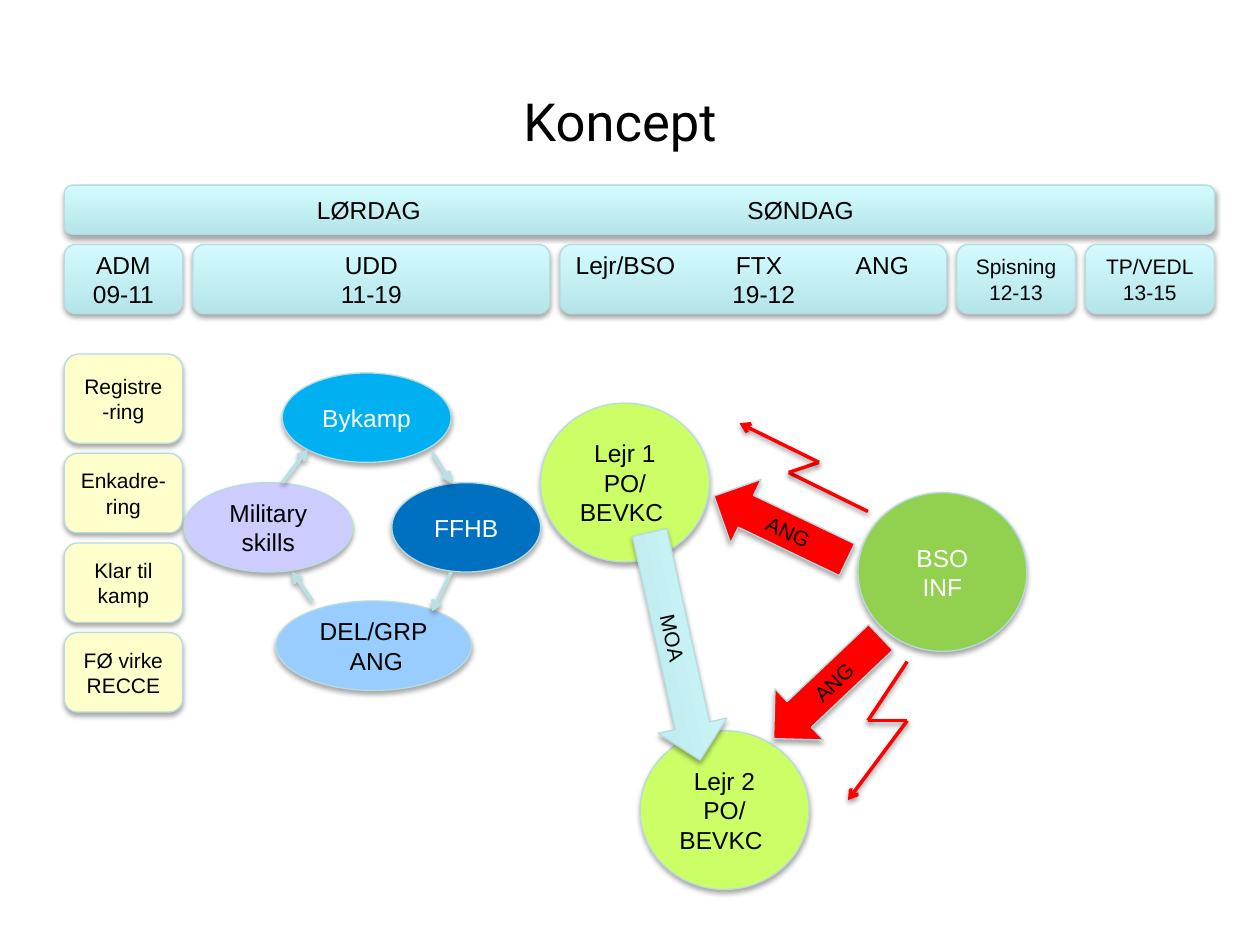
from lxml import etree
from pptx import Presentation
from pptx.dml import color
from pptx.enum import shapes, text
from pptx.oxml import ns
from pptx.util import Pt

ROUND = shapes.MSO_SHAPE.ROUNDED_RECTANGLE
OVAL = shapes.MSO_SHAPE.OVAL
ARROW = shapes.MSO_SHAPE.RIGHT_ARROW
AQUA = ("B5E5E9", "D3FBFF")
LEFT, GAP = 36.7, 5.8


def rgb(code):
    """Turn a hex string into a colour."""
    return color.RGBColor.from_string(code)


def sub(parent, tag, **attrs):
    """Add a DrawingML child element."""
    node = etree.SubElement(parent, ns.qn(tag))
    for key, val in attrs.items():
        node.set(key, str(val))
    return node


def shade(item, alpha):
    """Give a shape or line a soft shadow below it."""
    effects = sub(item._element.spPr, "a:effectLst")
    outer = sub(effects, "a:outerShdw", blurRad=Pt(3.1), dist=Pt(1.8),
                dir=5400000, rotWithShape=0)
    sub(sub(outer, "a:srgbClr", val="000000"), "a:alpha", val=alpha * 1000)


def paint(fill, tone):
    """Fill with one colour or with an upward gradient."""
    if isinstance(tone, str):
        fill.solid()
        fill.fore_color.rgb = rgb(tone)
        return
    fill.gradient()
    fill.gradient_angle = 90
    for stop, code, place in zip(fill.gradient_stops, tone, (0, 1)):
        stop.color.rgb = rgb(code)
        stop.position = place


def write(frame, words, size, ink="000000", tabs=None):
    """Write lines, centred or set on one list of tab stops per line."""
    frame.text = words
    for n, para in enumerate(frame.paragraphs):
        para.alignment = text.PP_ALIGN.LEFT if tabs else text.PP_ALIGN.CENTER
        if tabs:
            stops = sub(para._p.get_or_add_pPr(), "a:tabLst")
            for pos in tabs[n]:
                sub(stops, "a:tab", pos=Pt(pos), algn="l")
        para.font.size = Pt(size)
        para.font.name = "Arial"
        para.font.color.rgb = rgb(ink)


def block(slide, kind, box, tone, words, size=14, ink="000000", tabs=None):
    """Add a filled, shadowed shape with text."""
    shape = slide.shapes.add_shape(kind, *map(Pt, box))
    paint(shape.fill, tone)
    shape.line.color.rgb = rgb("B6DCDF")
    shape.line.width = Pt(0.75)
    shade(shape, 35)
    shape.text_frame.vertical_anchor = text.MSO_ANCHOR.MIDDLE
    write(shape.text_frame, words, size, ink, tabs)
    return shape


def thrust(slide, box, tone, words, turn, flip=False):
    """Add a turned block arrow."""
    shape = block(slide, ARROW, box, tone, words, 12)
    shape.rotation = turn
    if flip:
        shape._element.spPr.xfrm.set("flipH", "1")


def trace(slide, points, tone):
    """Join points with lines, with an arrowhead at the last."""
    for start, end in zip(points, points[1:]):
        line = slide.shapes.add_connector(
            shapes.MSO_CONNECTOR.STRAIGHT, *map(Pt, start + end))
        line.line.color.rgb = rgb(tone)
        line.line.width = Pt(2)
        if end == points[-1]:
            sub(line._element.spPr.find(ns.qn("a:ln")), "a:tailEnd", type="arrow")
        shade(line, 38)


def head(slide):
    """Set the title."""
    title = slide.shapes.title
    title.left, title.top, title.width, title.height = map(Pt, (70.6, 37.4, 567.4, 62.6))
    title.text_frame.vertical_anchor = text.MSO_ANCHOR.MIDDLE
    write(title.text_frame, "Koncept", 30)
    title.text_frame.paragraphs[0].font.name = "Roboto"


def tasks(slide):
    """Stack the Saturday morning tasks."""
    top = 202.3
    for words, high in (("Registre-ring", 51), ("Enkadre-ring", 45.4),
                        ("Klar til kamp", 45.4), ("FØ virke\nRECCE", 45.4)):
        block(slide, ROUND, (LEFT, top, 67.7, high), "FFFFCC", words, 12)
        top += high + GAP


def plan(slide):
    """Lay out the timeline bar and its phases."""
    block(slide, ROUND, (LEFT, 105.8, 657.4, 28.1), AQUA,
          "\tLØRDAG\tSØNDAG", tabs=[(136, 382)])
    left = LEFT
    for words, wide, size, tabs in (
            ("ADM\n09-11", 67.7, 14, None),
            ("UDD\n11-19", 204, 14, None),
            ("Lejr/BSO\tFTX\tANG\n\t19-12", 221, 14, [(91.5, 160), (89.5,)]),
            ("Spisning\n12-13", 67.7, 12, None),
            ("TP/VEDL\n13-15", 73.6, 12, None)):
        block(slide, ROUND, (left, 139.7, wide, 39.6), AQUA, words, size, tabs=tabs)
        left += wide + GAP


def cycle(slide):
    """Draw the training cycle."""
    for left, top, wide, tone, words, ink in (
            (223.9, 275.8, 85, "0070C0", "FFHB", "FFFFFF"),
            (161.3, 213.1, 96.5, "00B0F0", "Bykamp", "FFFFFF"),
            (105.1, 275.8, 96.5, "CCCCFF", "Military skills", "000000"),
            (157.7, 343.4, 111.6, "99CCFF", "DEL/GRP\n ANG", "000000")):
        block(slide, OVAL, (left, top, wide, 51.1), tone, words, ink=ink)
    for points in (((247, 258.5), (257.8, 275.8)), ((178.6, 343.4), (167, 326.9)),
                   ((161.3, 275.8), (175.7, 257)), ((257.8, 326.9), (247, 349.2))):
        trace(slide, points, "BBE0E3")


def field(slide):
    """Draw the camps, the attacks and the radio links."""
    for left, top, tone, words, ink in (
            (308.9, 230.4, "CCFF66", "Lejr 1\nPO/BEVKC ", "000000"),
            (365.8, 417.6, "CCFF66", "Lejr 2\nPO/BEVKC ", "000000"),
            (490.3, 281.5, "92D050", "BSO\nINF", "FFFFFF")):
        block(slide, OVAL, (left, top, 96.5, 90.7), tone, words, ink=ink)
    thrust(slide, (319, 349.2, 133.2, 40.3), AQUA, "MOA", 77.5)
    thrust(slide, (403.9, 281.5, 84.2, 40.3), "FF0000", "ANG", 25.6, True)
    thrust(slide, (430.6, 373, 84.2, 40.3), "FF0000", "ANG", 316.6, True)
    trace(slide, ((496, 292.3), (450.7, 270), (468, 264.2), (422.6, 241.9)), "FF0000")
    trace(slide, ((518.4, 378), (496, 411.8), (518.4, 411.8), (484.6, 457.2)), "FF0000")


def main():
    """Build and save the slide."""
    deck = Presentation()
    deck.slide_width, deck.slide_height = Pt(720), Pt(540)
    slide = deck.slides.add_slide(deck.slide_layouts[5])
    for part in (head, tasks, plan, cycle, field):
        part(slide)
    deck.save("out.pptx")


if __name__ == "__main__":
    main()
